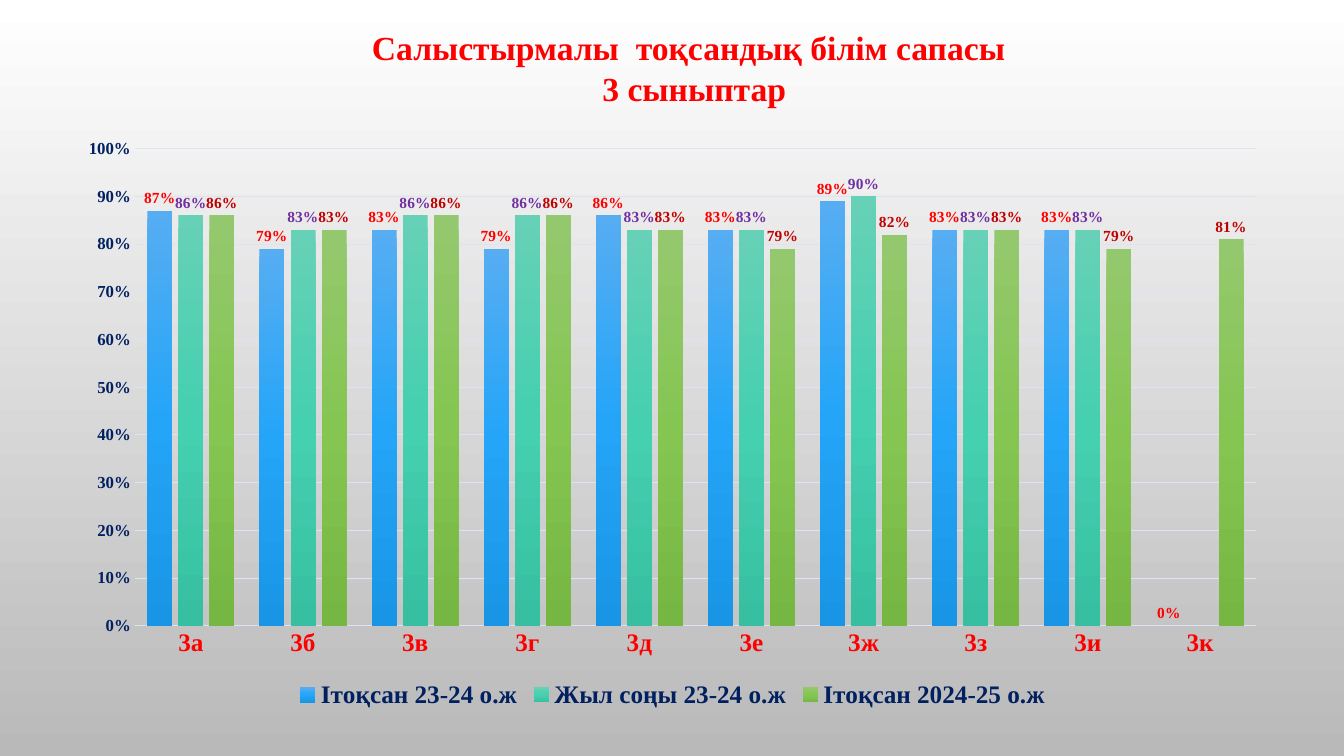
"""Build a slide comparing term results of the third-grade classes."""
import pptx
import pptx.chart.data
import pptx.dml.color
import pptx.enum.chart
import pptx.enum.text
import pptx.oxml
import pptx.oxml.ns
import pptx.util
import copy

COLORS = {"red": "FF0000", "navy": "002060", "purple": "7030A0", "dark_red": "C00000",
          "grid": "DCE4EF", "black": "000000"}
BACKDROP = ["FFFFFF", "B9B9B9"]
TITLE = ["Салыстырмалы  тоқсандық білім сапасы", "3 сыныптар"]
CLASSES = ["3а", "3б", "3в", "3г", "3д", "3е", "3ж", "3з", "3и", "3к"]
TERMS = [
    {"name": "Ітоқсан 23-24 о.ж", "label": "red", "shades": ["56ADF2", "25A5F8", "1895E5"],
     "values": [0.87, 0.79, 0.83, 0.79, 0.86, 0.83, 0.89, 0.83, 0.83, 0]},
    {"name": "Жыл соңы 23-24 о.ж", "label": "purple", "shades": ["66D1B6", "45D0B0", "36C0A1"],
     "values": [0.86, 0.83, 0.86, 0.86, 0.83, 0.83, 0.9, 0.83, 0.83, None]},
    {"name": "Ітоқсан 2024-25 о.ж", "label": "dark_red", "shades": ["94C86E", "85C652", "76B643"],
     "values": [0.86, 0.83, 0.86, 0.86, 0.83, 0.79, 0.82, 0.83, 0.79, 0.81]},
]
SLIDE_SIZE = (13.33, 7.5)
TITLE_PLACE = (3.59, 0.22, 6.59, 0.91)
CHART_PLACE = (0.64, 1.27, 12.06, 5.81)
SERIF = "Times New Roman"


def inches(lengths):
    return [pptx.util.Inches(length) for length in lengths]


def rgb(value):
    return pptx.dml.color.RGBColor.from_string(value)


def set_font(font, size, color, name=SERIF, bold=True):
    font.size = pptx.util.Pt(size)
    font.color.rgb = rgb(COLORS[color])
    font.name = name
    font.bold = bold


def set_line(line):
    line.color.rgb = rgb(COLORS["grid"])
    line.width = pptx.util.Pt(0.75)


def fill_downward(fill, element, shades):
    fill.gradient()
    fill.gradient_angle = 270
    stop_list = next(element.iter(pptx.oxml.ns.qn("a:gsLst")))
    while len(stop_list) < len(shades):
        stop_list.append(copy.deepcopy(stop_list[0]))
    for index, (stop, shade) in enumerate(zip(fill.gradient_stops, shades)):
        stop.color.rgb = rgb(shade)
        stop.position = index / (len(shades) - 1)


def add_title(page):
    box = page.shapes.add_textbox(*inches(TITLE_PLACE))
    frame = box.text_frame
    frame.word_wrap = True
    frame.auto_size = pptx.enum.text.MSO_AUTO_SIZE.SHAPE_TO_FIT_TEXT
    for index, line in enumerate(TITLE):
        para = frame.add_paragraph() if index else frame.paragraphs[0]
        para.alignment = pptx.enum.text.PP_ALIGN.CENTER if index else pptx.enum.text.PP_ALIGN.LEFT
        span = para.add_run()
        span.text = line
        set_font(span.font, 24, "red")


def style_axes(chart):
    for axis, size, color in ((chart.category_axis, 18, "red"), (chart.value_axis, 12, "navy")):
        axis.major_tick_mark = axis.minor_tick_mark = pptx.enum.chart.XL_TICK_MARK.NONE
        set_font(axis.tick_labels.font, size, color)
    set_line(chart.category_axis.format.line)
    scale = chart.value_axis
    scale.minimum_scale, scale.maximum_scale, scale.major_unit = 0, 1, 0.1
    scale.format.line.fill.background()
    scale.has_major_gridlines = True
    set_line(scale.major_gridlines.format.line)
    scale.tick_labels.number_format = "0%"
    scale.tick_labels.number_format_is_linked = False


def style_series(series, term):
    series.invert_if_negative = False
    fill_downward(series.format.fill, series.format.element if hasattr(series.format, "element")
                  else series._element, term["shades"])
    labels = series.data_labels
    labels.show_value = True
    labels.position = pptx.enum.chart.XL_LABEL_POSITION.OUTSIDE_END
    labels.number_format = "0%"
    labels.number_format_is_linked = False
    set_font(labels.font, 11, term["label"])


def add_results_chart(page):
    data = pptx.chart.data.CategoryChartData(number_format="0%")
    data.categories = CLASSES
    for term in TERMS:
        data.add_series(term["name"], term["values"])
    kind = pptx.enum.chart.XL_CHART_TYPE.COLUMN_CLUSTERED
    chart = page.shapes.add_chart(kind, *inches(CHART_PLACE), data).chart
    set_font(chart.font, 10, "black", "Cabin", False)
    chart.has_title = False
    chart.has_legend = True
    chart.legend.position = pptx.enum.chart.XL_LEGEND_POSITION.BOTTOM
    chart.legend.include_in_layout = False
    set_font(chart.legend.font, 18, "navy")
    style_axes(chart)
    plot = chart.plots[0]
    plot.gap_width, plot.overlap, plot.vary_by_categories = 100, -24, False
    for series, term in zip(plot.series, TERMS):
        style_series(series, term)


def main():
    deck = pptx.Presentation()
    deck.slide_width, deck.slide_height = inches(SLIDE_SIZE)
    page = deck.slides.add_slide(deck.slide_layouts[6])
    fill_downward(page.background.fill, page.element, BACKDROP)
    add_title(page)
    add_results_chart(page)
    deck.save("out.pptx")


if __name__ == "__main__":
    main()
